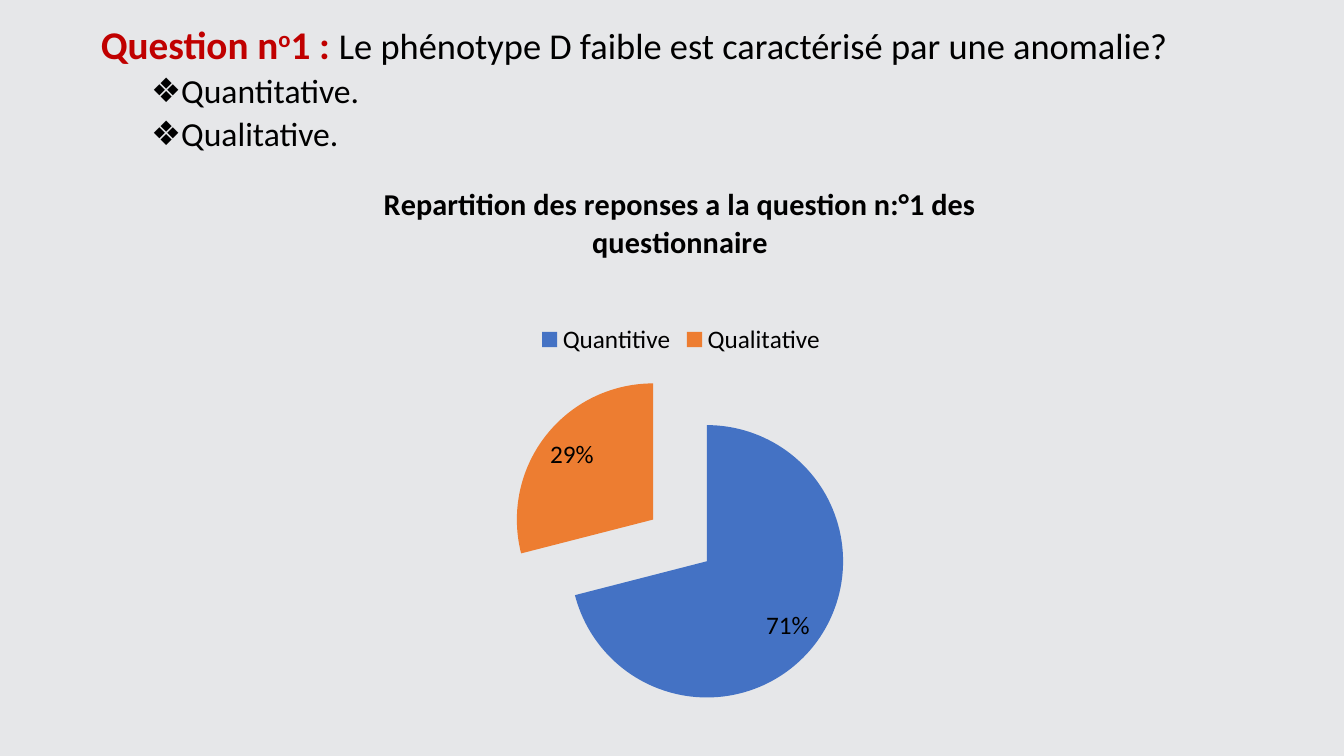
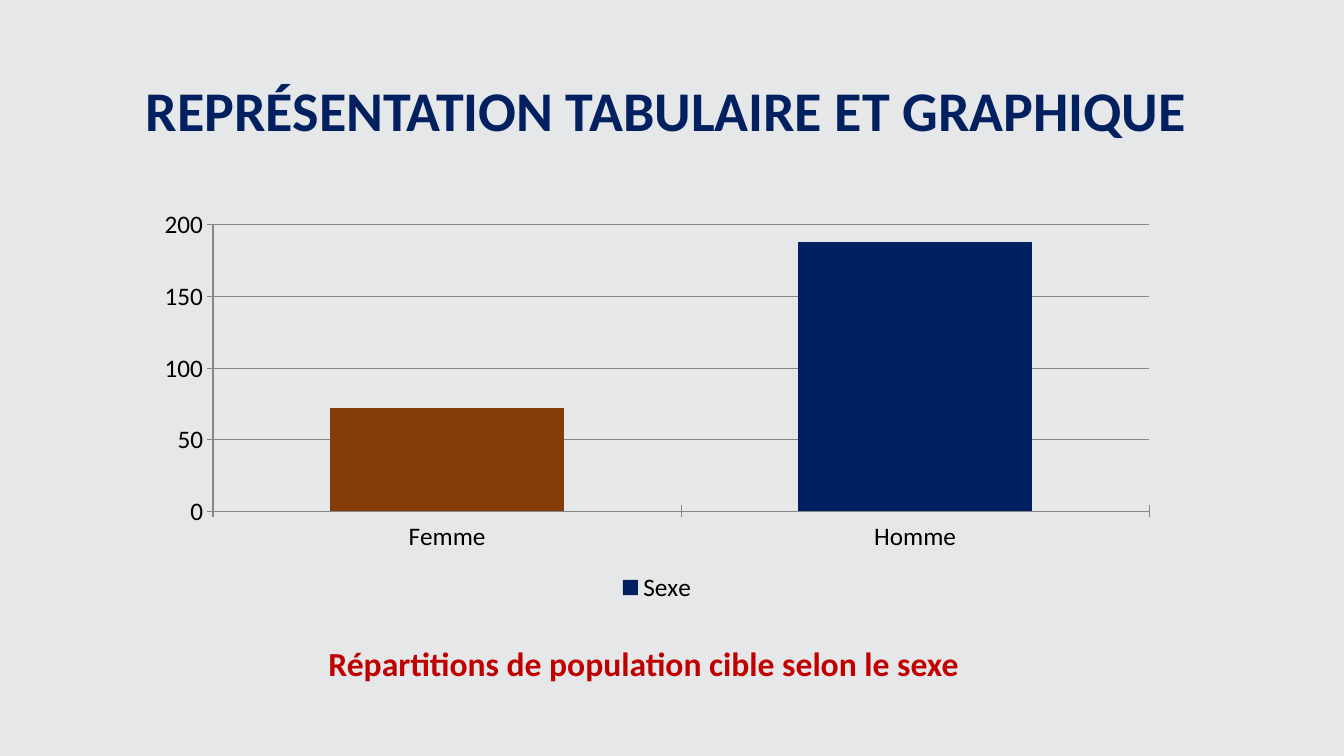
from lxml import etree
from pptx import Presentation
from pptx.chart.data import CategoryChartData
from pptx.dml.color import RGBColor
from pptx.enum.chart import XL_CHART_TYPE, XL_LABEL_POSITION, XL_LEGEND_POSITION, XL_TICK_MARK
from pptx.enum.text import MSO_ANCHOR, MSO_AUTO_SIZE, PP_ALIGN
from pptx.oxml.ns import qn
from pptx.util import Inches, Pt

PIE, COLUMN = XL_CHART_TYPE.PIE, XL_CHART_TYPE.COLUMN_CLUSTERED
TOP, BOTTOM = XL_LEGEND_POSITION.TOP, XL_LEGEND_POSITION.BOTTOM
INSIDE_END = XL_LABEL_POSITION.INSIDE_END
CROSS = XL_TICK_MARK.CROSS
MIDDLE = MSO_ANCHOR.MIDDLE
NO_FIT = MSO_AUTO_SIZE.NONE
LEFT, CENTER = PP_ALIGN.LEFT, PP_ALIGN.CENTER
TITLE_ONLY, TITLE_AND_CONTENT = 5, 1

FONT = "Calibri"
PAPER, INK, RED, NAVY = "E6E7E9", "000000", "C00000", "002060"
BLUE, ORANGE, BROWN, GREY = "4472C4", "ED7D31", "843C0B", "878787"


def color(value):
    return RGBColor.from_string(value)


def style_font(font, size, ink=INK, bold=False):
    font.name, font.size, font.bold = FONT, Pt(size), bold
    font.color.rgb = color(ink)


def add_text(para, text, size=24, ink=INK, bold=False, raised=0):
    """Add one formatted span; raised is a superscript shift in percent."""
    span = para.add_run()
    span.text = text
    style_font(span.font, size, ink, bold)
    if raised:
        span.font._element.set("baseline", str(raised * 1000))


def set_para(para, align=LEFT, spacing=1.0, before=0, indent=0, bullet=None):
    """Set spacing and a hanging indent (inches), with or without a bullet."""
    para.alignment, para.line_spacing, para.space_before = align, spacing, Pt(before)
    props = para._p.get_or_add_pPr()
    if indent:
        props.set("marL", str(Inches(indent)))
        props.set("indent", str(-Inches(0.25)))
    if bullet:
        etree.SubElement(props, qn("a:buChar")).set("char", bullet)
    else:
        etree.SubElement(props, qn("a:buNone"))


def set_layout(parent, position, **shares):
    """Give a chart part a fixed place, as shares of the chart."""
    for old in parent.findall(qn("c:layout")):
        parent.remove(old)
    layout = etree.Element(qn("c:layout"))
    manual = etree.SubElement(layout, qn("c:manualLayout"))
    if "w" in shares:
        etree.SubElement(manual, qn("c:layoutTarget")).set("val", "inner")
    for mode in ("xMode", "yMode"):
        etree.SubElement(manual, qn("c:" + mode)).set("val", "edge")
    for key, share in shares.items():
        etree.SubElement(manual, qn("c:" + key)).set("val", str(share))
    parent.insert(position, layout)


class Deck:
    """Holds the shared style and the current slide; places are percent of the slide."""

    def __init__(self):
        self.deck = Presentation()
        self.deck.slide_width, self.deck.slide_height = Inches(13.33), Inches(7.5)
        fill = self.deck.slide_master.background.fill
        fill.solid()
        fill.fore_color.rgb = color(PAPER)
        self.page = None

    def new_page(self, layout):
        self.page = self.deck.slides.add_slide(self.deck.slide_layouts[layout])

    def area(self, left, top, width, height):
        wide, high = self.deck.slide_width / 100, self.deck.slide_height / 100
        return [int(part) for part in (left * wide, top * high, width * wide, height * high)]

    def place(self, box, place):
        box.left, box.top, box.width, box.height = self.area(*place)
        box.text_frame.word_wrap = True
        box.text_frame.auto_size = NO_FIT

    def title(self, place, text):
        box = self.page.shapes.title
        self.place(box, place)
        box.text_frame.vertical_anchor = MIDDLE
        para = box.text_frame.paragraphs[0]
        set_para(para, CENTER, 0.9)
        add_text(para, text, size=40, ink=NAVY, bold=True)

    def question(self, place, label, text, answers):
        """Fill the body with a red label, the question and its possible answers."""
        heading = self.page.shapes.title._element
        heading.getparent().remove(heading)
        box = self.page.placeholders[1]
        self.place(box, place)
        para = box.text_frame.paragraphs[0]
        set_para(para, spacing=0.9, before=10, indent=0.25)
        for part, raised in label:
            add_text(para, part, size=28, ink=RED, bold=True, raised=raised)
        add_text(para, text, size=26)
        for answer in answers:
            para = box.text_frame.add_paragraph()
            para.level = 1
            set_para(para, spacing=0.9, before=5, indent=0.75, bullet="❖")
            add_text(para, answer)

    def caption(self, place, text):
        box = self.page.shapes.add_textbox(*self.area(*place))
        self.place(box, place)
        add_text(box.text_frame.paragraphs[0], text, ink=RED, bold=True)

    def chart(self, kind, place, name, values, fills, legend):
        """Add a one-series chart; values maps categories, fills maps point numbers."""
        data = CategoryChartData()
        data.categories = list(values)
        data.add_series(name, list(values.values()))
        chart = self.page.shapes.add_chart(kind, *self.area(*place), data).chart
        style_font(chart.font, 18)
        chart.has_title = False
        chart.has_legend = True
        chart.legend.position = legend
        chart.legend.include_in_layout = False
        series = chart.plots[0].series[0]
        for index, fill in fills.items():
            look = series.points[index].format
            look.fill.solid()
            look.fill.fore_color.rgb = color(fill)
            look.line.fill.background()
        return chart

    def pie(self, place, name, values, fills, explosion):
        chart = self.chart(PIE, place, name, values, fills, TOP)
        chart.has_title = True
        add_text(chart.chart_title.text_frame.paragraphs[0], name, size=21.6, bold=True)
        chart.chart_title.include_in_layout = False
        plot = chart.plots[0]
        plot.vary_by_categories = True
        # Slices pulled apart
        burst = etree.Element(qn("c:explosion"))
        burst.set("val", str(explosion))
        plot.series[0]._element.find(qn("c:tx")).addnext(burst)
        # Percent labels
        plot.has_data_labels = True
        labels = plot.data_labels
        labels.show_percentage, labels.show_value = True, False
        labels.number_format, labels.number_format_is_linked = "0%", False
        labels.position = INSIDE_END
        style_font(labels.font, 18)
        # Legend and pie under the two-line title
        set_layout(chart.legend._element, 1, x=0.33, y=0.28)
        set_layout(chart._chartSpace.find(".//" + qn("c:plotArea")), 0,
                   x=0.3, y=0.37, w=0.4, h=0.6)

    def columns(self, place, name, values, fill, fills, gap):
        chart = self.chart(COLUMN, place, name, values, fills, BOTTOM)
        plot = chart.plots[0]
        plot.vary_by_categories = False
        plot.gap_width = gap
        look = plot.series[0].format
        look.fill.solid()
        look.fill.fore_color.rgb = color(fill)
        chart.value_axis.has_major_gridlines = True
        lines = [chart.value_axis.major_gridlines.format.line]
        for axis in (chart.category_axis, chart.value_axis):
            axis.major_tick_mark = CROSS
            style_font(axis.tick_labels.font, 18)
            lines.append(axis.format.line)
        for line in lines:
            line.color.rgb = color(GREY)
            line.width = Pt(0.75)


def main():
    show = Deck()

    # Question 1
    show.new_page(TITLE_AND_CONTENT)
    show.question((6.75, 2.67, 86.25, 20.53),
                  [("Question n", 0), ("o", 30), ("1 : ", 0)],
                  "Le phénotype D faible est caractérisé par une anomalie?",
                  ["Quantitative.", "Qualitative."])
    show.pie((18.6, 21.2, 64, 75.07),
             "Repartition des reponses a la question n:°1 des questionnaire",
             {"Quantitive": 71, "Qualitative": 29}, {0: BLUE, 1: ORANGE}, explosion=25)

    # Population by sex
    show.new_page(TITLE_ONLY)
    show.title((6.9, 5.33, 86.25, 19.33), "REPRÉSENTATION TABULAIRE ET GRAPHIQUE ")
    show.columns((10.73, 26.67, 76.3, 53.73), "Sexe",
                 {"Femme": 72, "Homme": 188}, NAVY, {0: BROWN}, gap=100)
    show.caption((23.7, 84.4, 49.5, 6.67), "Répartitions de population cible selon le sexe")

    show.deck.save("out.pptx")


if __name__ == "__main__":
    main()
